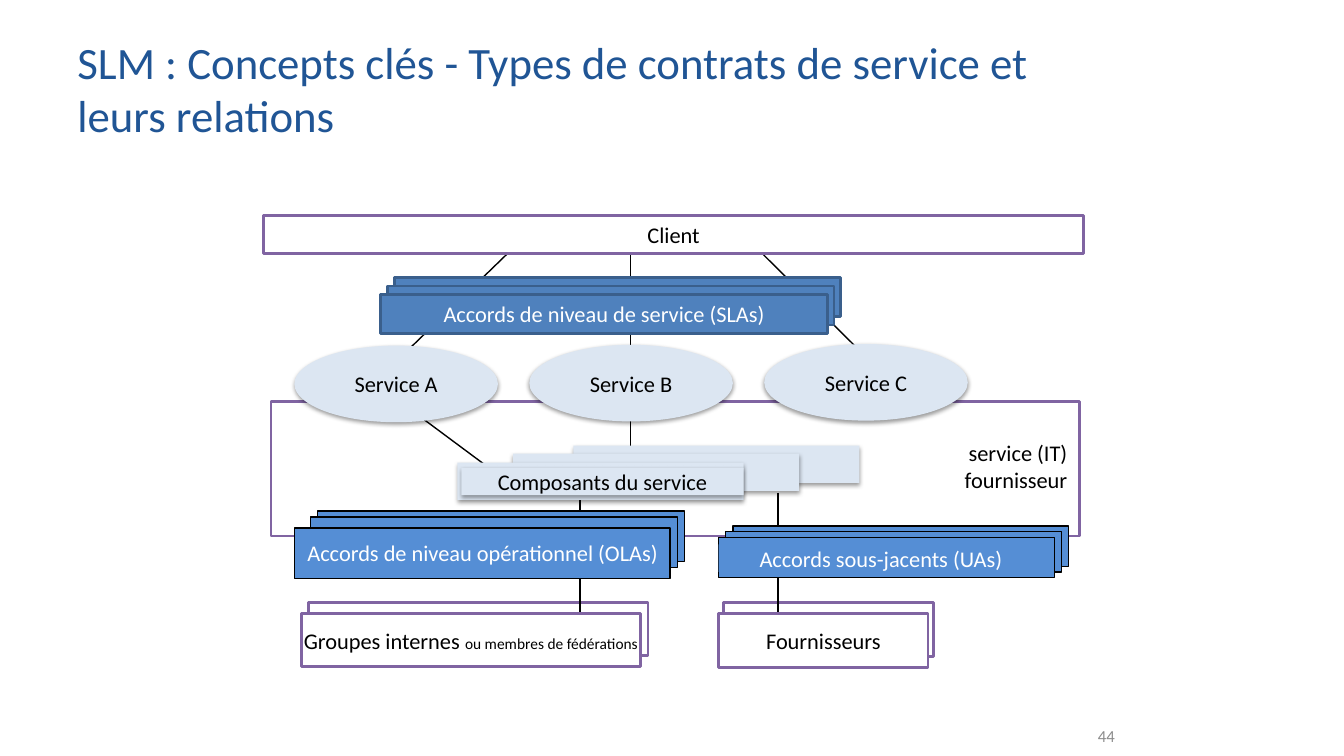
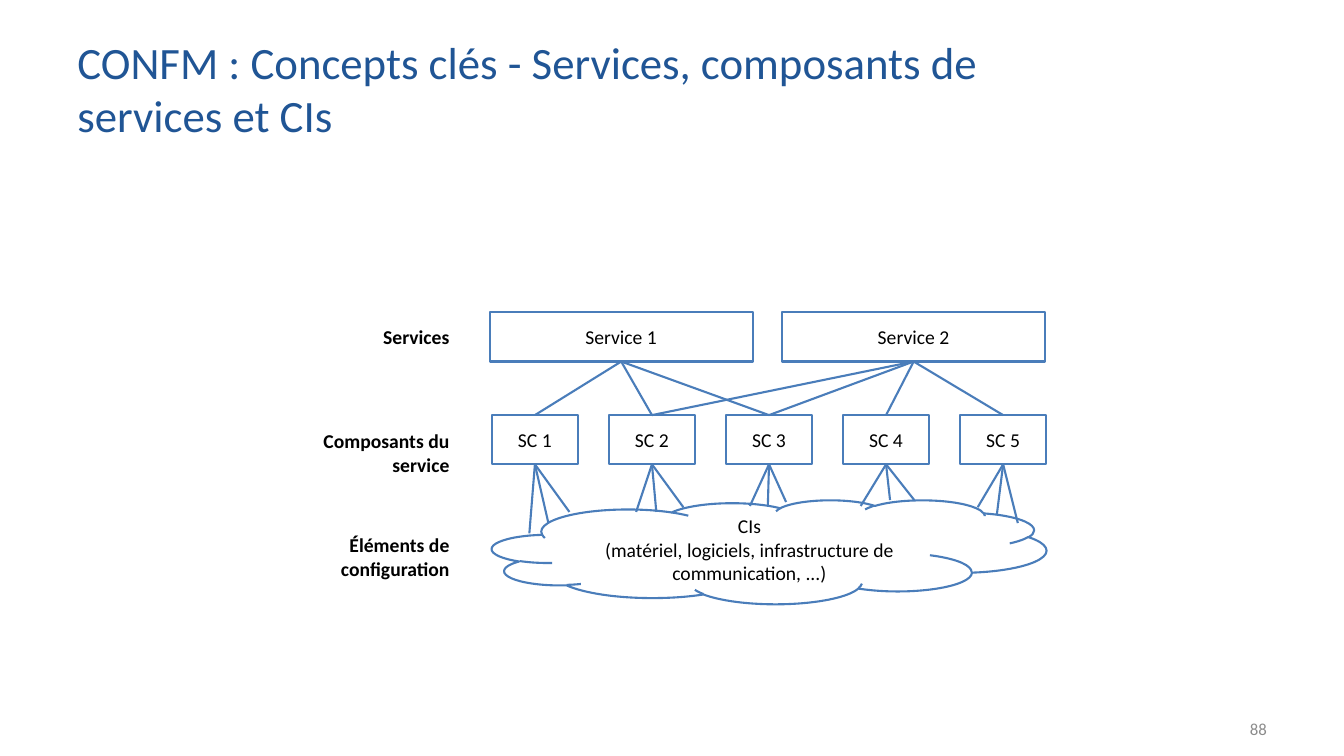
from pptx import Presentation
from pptx.dml.color import RGBColor
from pptx.enum.shapes import MSO_CONNECTOR, MSO_SHAPE
from pptx.enum.text import MSO_ANCHOR, MSO_AUTO_SIZE, PP_ALIGN
from pptx.oxml import parse_xml
from pptx.oxml.ns import nsdecls, qn
from pptx.util import Cm, Pt

RECT, ELLIPSE, CLOUD = MSO_SHAPE.RECTANGLE, MSO_SHAPE.OVAL, MSO_SHAPE.CLOUD
STRAIGHT = MSO_CONNECTOR.STRAIGHT
TOP, MIDDLE = MSO_ANCHOR.TOP, MSO_ANCHOR.MIDDLE
LEFT, CENTER, RIGHT = PP_ALIGN.LEFT, PP_ALIGN.CENTER, PP_ALIGN.RIGHT
TITLE_ONLY = 5
SITE_TOP, SITE_BOTTOM = 0, 2

COLORS = {
    "title": "205595", "number": "8C8C8C", "black": "000000", "white": "FFFFFF",
    "purple": "8064A2", "sla": "4F81BD", "sla_edge": "3A5F8C",
    "agreement": "558ED5", "pale": "DCE6F2", "link": "4A7DBA",
}

# Looks of the boxes: fill, edge and edge width, soft shadow
OUTLINED = {"fill": "white", "edge": "purple", "width": 2}
SLA = {"fill": "sla", "edge": "sla_edge", "width": 2}
AGREEMENT = {"fill": "agreement", "edge": "black", "width": 1}
AGREEMENT_LABEL = {"fill": "agreement"}
PALE = {"fill": "pale", "shadow": True}
WIRE = {"edge": "link", "width": 1.5}

# Looks of the text
TITLE = {"size": Pt(32), "bold": False}
NUMBER = {"size": Pt(12)}
BODY = {"size": Pt(16)}
FINE = {"size": Pt(11)}
SMALL = {"size": Pt(14)}
SMALL_BOLD = {"size": Pt(14), "bold": True}

NO_INSETS = (0, 0, 0, 0)
DEFAULT_INSETS = (0.25, 0.13, 0.25, 0.13)


def rgb(name):
    return RGBColor.from_string(COLORS[name])


def add_run(p, text, font, color):
    r = p.add_run()
    r.text = text
    for key, value in {"name": "Calibri", **font}.items():
        setattr(r.font, key, value)
    r.font.color.rgb = rgb(color)


def write(s, lines, font, color="black", align=CENTER, anchor=MIDDLE,
          insets=NO_INSETS):
    """Fill a shape with one paragraph for each line."""
    tf = s.text_frame
    left, top, right, bottom = (Cm(v) for v in insets)
    frame = {"word_wrap": True, "auto_size": MSO_AUTO_SIZE.NONE,
             "vertical_anchor": anchor, "margin_left": left,
             "margin_top": top, "margin_right": right, "margin_bottom": bottom}
    for key, value in frame.items():
        setattr(tf, key, value)
    for i, line in enumerate(lines):
        p = tf.add_paragraph() if i else tf.paragraphs[0]
        p.alignment = align
        add_run(p, line, font, color)


def add_text(slide, at, lines, font, **layout):
    s = slide.shapes.add_textbox(*(Cm(v) for v in at))
    write(s, lines, font, **layout)


def add_box(slide, at, look, kind=RECT):
    s = slide.shapes.add_shape(kind, *(Cm(v) for v in at))
    if "fill" in look:
        s.fill.solid()
        s.fill.fore_color.rgb = rgb(look["fill"])
    else:
        s.fill.background()
    if "edge" in look:
        s.line.color.rgb = rgb(look["edge"])
        s.line.width = Pt(look["width"])
    else:
        s.line.fill.background()
    s.shadow.inherit = False
    if look.get("shadow"):
        effects = s._element.spPr.find(qn("a:effectLst"))
        effects.append(parse_xml(
            f'<a:outerShdw {nsdecls("a")} blurRad="{Pt(3.1)}" dist="{Pt(1.6)}" '
            'dir="5400000" rotWithShape="0"><a:srgbClr val="000000">'
            '<a:alpha val="38000"/></a:srgbClr></a:outerShdw>'))
    return s


def add_stack(slide, places, size, look):
    """Draw equal boxes from back to front and return the front one."""
    return [add_box(slide, (*place, *size), look) for place in places][-1]


def add_line(slide, start, end, color, width):
    s = slide.shapes.add_connector(STRAIGHT, *(Cm(v) for v in (*start, *end)))
    s.line.color.rgb = rgb(color)
    s.line.width = Pt(width)
    s._element.spPr.append(parse_xml(f'<a:effectLst {nsdecls("a")}/>'))
    return s


def add_slide(prs, title, number, number_at):
    slide = prs.slides.add_slide(prs.slide_layouts[TITLE_ONLY])
    s = slide.shapes.title
    s.left, s.top, s.width, s.height = Cm(1.7), Cm(0.76), Cm(25.17), Cm(2.92)
    write(s, [title], TITLE, color="title", align=LEFT, insets=DEFAULT_INSETS)
    add_text(slide, number_at, [number], NUMBER, color="number", align=RIGHT,
             insets=DEFAULT_INSETS)
    return slide


def build_contracts(prs):
    slide = add_slide(
        prs, "SLM : Concepts clés - Types de contrats de service et leurs relations",
        "44", (22.43, 18.03, 5.92, 1.02))

    # Boxes behind the lines
    add_box(slide, (18.24, 15.19, 5.28, 1.35), OUTLINED)
    add_box(slide, (7.77, 15.19, 8.56, 1.32), OUTLINED)
    add_box(slide, (6.83, 10.11, 20.37, 3.4), OUTLINED)

    # Lines from client to services, components and groups
    for start, end in [
        ((15.89, 5.64), (15.89, 12.07)),
        ((13.46, 5.74), (9.55, 9.53)),
        ((18.64, 5.82), (22.3, 9.47)),
        ((19.61, 12.42), (19.61, 16.21)),
        ((14.62, 12.29), (14.62, 16.64)),
        ((9.58, 9.75), (13.28, 12.5)),
    ]:
        add_line(slide, start, end, "black", 1)

    # Client and service level agreements
    client = add_box(slide, (6.65, 5.44, 20.65, 0.94), OUTLINED)
    write(client, ["Client"], BODY)
    sla = add_stack(slide, [(9.6 + 0.17 * i, 7.42 - 0.21 * i) for i in (2, 1, 0)],
                    (11.25, 0.98), SLA)
    write(sla, ["Accords de niveau de service (SLAs)"], BODY, color="white")

    # Services
    for i, letter in enumerate("ABC"):
        service = add_box(slide, (7.42 + 5.92 * i, 8.71 - 0.02 * i, 5.13, 1.93),
                          PALE, ELLIPSE)
        write(service, [f"Service {letter}"], BODY)

    # Service components
    add_stack(slide, [(14.45, 11.23), (12.93, 11.43), (11.53, 11.66)],
              (7.21, 0.94), PALE)
    components = add_box(slide, (11.63, 11.79, 7.11, 0.69), PALE)
    write(components, ["Composants du service"], BODY)

    # Operational and underpinning agreements
    add_stack(slide, [(8, 12.88), (7.82, 13.03)], (9.25, 1.27), AGREEMENT)
    add_box(slide, (7.42, 13.31, 9.47, 1.27), AGREEMENT)
    add_stack(slide, [(18.11 + 0.18 * i, 13.54 - 0.14 * i) for i in (2, 1, 0)],
              (8.46, 1.02), AGREEMENT)
    for at, text in [
        ((7.49, 13.59, 9.35, 0.69), "Accords de niveau opérationnel (OLAs)"),
        ((18.11, 13.72, 8.18, 0.69), "Accords sous-jacents (UAs)"),
    ]:
        write(add_box(slide, at, AGREEMENT_LABEL), [text], BODY, color="white")

    # Internal groups and suppliers
    groups = add_box(slide, (7.59, 15.47, 8.56, 1.32), OUTLINED)
    write(groups, ["Groupes internes "], BODY)
    add_run(groups.text_frame.paragraphs[0], "ou membres de fédérations", FINE, "black")
    suppliers = add_box(slide, (18.11, 15.47, 5.28, 1.35), OUTLINED)
    write(suppliers, ["Fournisseurs"], BODY)

    add_text(slide, (23.88, 11.07, 3.02, 1.37), ["service (IT)", "fournisseur"],
             BODY, align=RIGHT, anchor=TOP)


def build_configuration(prs):
    slide = add_slide(
        prs, "CONFM : Concepts clés - Services, composants de services et CIs",
        "88", (24.28, 17.86, 7.9, 1.02))

    # Cloud of configuration items
    cloud = add_box(slide, (12.4, 12.6, 13.97, 2.62), WIRE, CLOUD)
    write(cloud, ["CIs", "(matériel, logiciels, infrastructure de communication, ...)"],
          SMALL, insets=DEFAULT_INSETS)

    # Services and their components
    services = [add_box(slide, (x, 7.87, 6.63, 1.24), WIRE) for x in (12.34, 19.71)]
    parts = [add_box(slide, (12.4 + 2.95 * i, 10.46, 2.16, 1.24), WIRE)
             for i in range(5)]
    for name, boxes in (("Service", services), ("SC", parts)):
        for i, box in enumerate(boxes, 1):
            write(box, [f"{name} {i}"], SMALL, insets=DEFAULT_INSETS)

    # Links from each service to the components it uses
    for service, used in zip(services, [(0, 1, 2), (1, 2, 3, 4)]):
        for i in used:
            s = add_line(slide, (0, 0), (1, 1), "link", 1.5)
            s.begin_connect(service, SITE_BOTTOM)
            s.end_connect(parts[i], SITE_TOP)

    # Links from each component into the cloud
    cloud_ends = [
        [(13.34, 13.44), (13.82, 13.18), (14.35, 12.9)],
        [(16.03, 12.9), (16.54, 12.9), (17.22, 12.78)],
        [(18.9, 12.75), (19.35, 12.75), (19.81, 12.65)],
        [(21.69, 12.75), (22.43, 12.6), (23.04, 12.6)],
        [(24.64, 12.78), (25.12, 12.98), (25.65, 13.18)],
    ]
    for part, ends in zip(parts, cloud_ends):
        for end in ends:
            s = add_line(slide, (0, 0), end, "link", 1.5)
            s.begin_connect(part, SITE_BOTTOM)

    # Row labels
    for i, label in enumerate(["Services", "Composants du service",
                               "Éléments de configuration"]):
        add_text(slide, (6.86, 8.05 + 2.63 * i, 4.72, 0.86), [label], SMALL_BOLD,
                 align=RIGHT, anchor=TOP, insets=DEFAULT_INSETS)


def main():
    prs = Presentation()
    prs.slide_width, prs.slide_height = Cm(33.87), Cm(19.05)
    build_contracts(prs)
    build_configuration(prs)
    prs.save("out.pptx")


if __name__ == "__main__":
    main()
